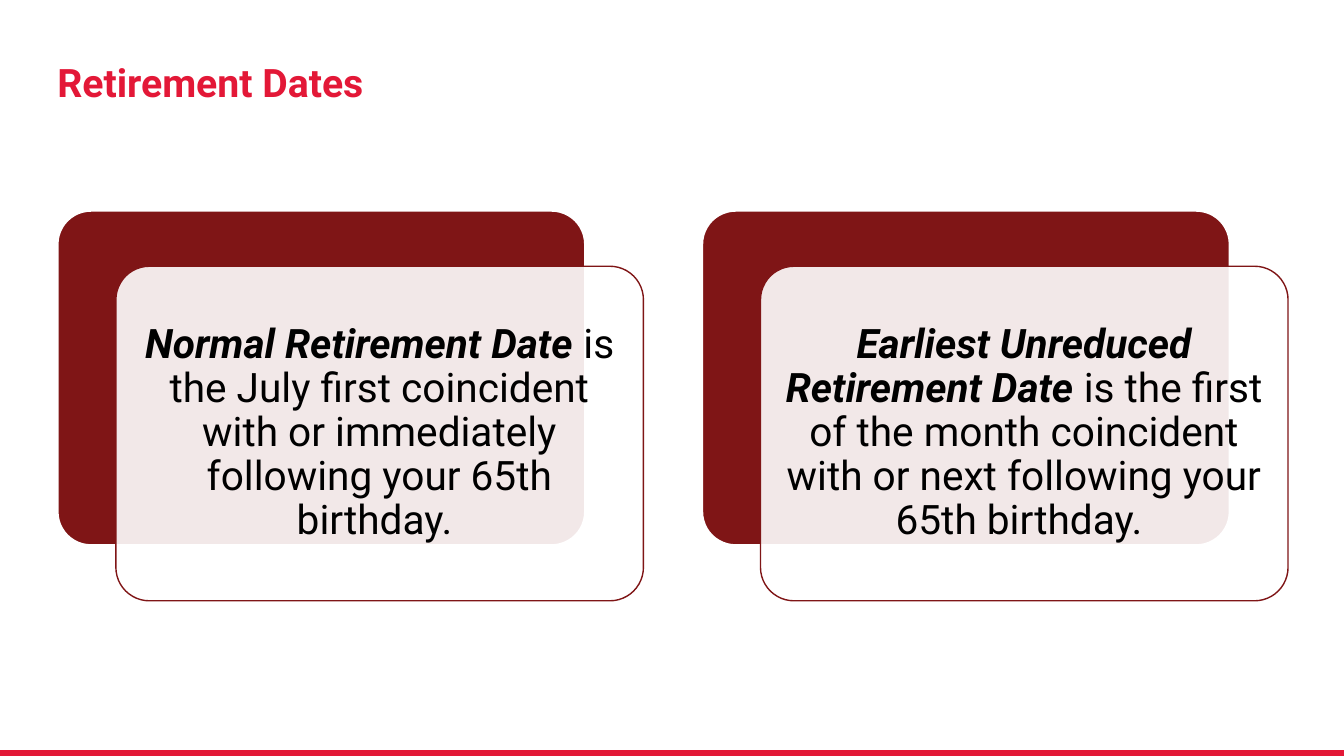
from lxml import etree
from pptx import Presentation
from pptx.dml.color import RGBColor
from pptx.enum.shapes import MSO_SHAPE as Preset
from pptx.enum.text import MSO_ANCHOR as Anchor, PP_ALIGN as Align
from pptx.oxml.ns import qn
from pptx.util import Cm, Pt

COLORS = {"red": "E31837", "maroon": "7F1516", "white": "FFFFFF", "black": "000000"}
FONT = "Roboto"
SLIDE_WIDTH, SLIDE_HEIGHT = 33.87, 19.05
MARGIN = 1.45
CONTENT_WIDTH = 31.01

RETIREMENT_DATES = [
    ("Normal Retirement Date ",
     "is the July first coincident with or immediately following your 65th birthday. "),
    ("Earliest Unreduced Retirement Date ",
     "is the first of the month coincident with or next following your 65th birthday. "),
]


def color(name):
    return RGBColor.from_string(COLORS[name])


def set_margins(frame, margin):
    frame.margin_left = frame.margin_right = Cm(margin)
    frame.margin_top = frame.margin_bottom = Cm(margin)


def add_panel(slide, preset, box, fill, line=None, line_width=1):
    panel = slide.shapes.add_shape(preset, *map(Cm, box))
    panel.shadow.inherit = False
    panel.fill.solid()
    panel.fill.fore_color.rgb = color(fill)
    if line:
        panel.line.color.rgb = color(line)
        panel.line.width = Pt(line_width)
    else:
        panel.line.fill.background()
    return panel


def add_title(slide, box, text):
    frame = slide.shapes.add_textbox(*map(Cm, box)).text_frame
    frame.word_wrap = True
    frame.vertical_anchor = Anchor.BOTTOM
    set_margins(frame, 0)
    title = frame.paragraphs[0]
    title.text = text
    title.line_spacing = 0.85
    title.font.name, title.font.size, title.font.bold = FONT, Pt(28), True
    title.font.color.rgb = color("red")


def add_date_card(slide, box, term, definition):
    left, top, width, height = box
    shift_x, shift_y = 1.47, 1.4
    size = (width - shift_x, height - shift_y)

    # Solid card behind, translucent card in front
    back = add_panel(slide, Preset.ROUNDED_RECTANGLE, (left, top, *size),
                     "maroon", "white", 1.5)
    front = add_panel(slide, Preset.ROUNDED_RECTANGLE,
                      (left + shift_x, top + shift_y, *size), "white", "maroon")
    for card in (back, front):
        card.adjustments[0] = 0.1
    fill_color = front.fill._xPr.find(qn("a:solidFill"))[0]
    etree.SubElement(fill_color, qn("a:alpha"), val="90000")

    # Term and its definition
    frame = front.text_frame
    frame.word_wrap = True
    frame.vertical_anchor = Anchor.MIDDLE
    set_margins(frame, 0.3)
    sentence = frame.paragraphs[0]
    sentence.alignment = Align.CENTER
    sentence.line_spacing = 0.9
    sentence.font.name, sentence.font.size = FONT, Pt(29)
    sentence.font.color.rgb = color("black")
    for text, emphasis in ((term, True), (definition, False)):
        run = sentence.add_run()
        run.text = text
        run.font.bold = run.font.italic = emphasis


def add_date_cards(slide, box):
    left, top, width, height = box
    gap = 1.48
    card_width = (width - gap * (len(RETIREMENT_DATES) - 1)) / len(RETIREMENT_DATES)
    for index, (term, definition) in enumerate(RETIREMENT_DATES):
        card_left = left + index * (card_width + gap)
        add_date_card(slide, (card_left, top, card_width, height), term, definition)


def main():
    deck = Presentation()
    deck.slide_width, deck.slide_height = Cm(SLIDE_WIDTH), Cm(SLIDE_HEIGHT)
    slide = deck.slides.add_slide(deck.slide_layouts[6])

    # Footer bar, title and cards
    add_panel(slide, Preset.RECTANGLE, (0, 18.9, SLIDE_WIDTH, 0.15), "red")
    add_title(slide, (MARGIN, 0.64, CONTENT_WIDTH, 2.01), "Retirement Dates")
    add_date_cards(slide, (MARGIN, 5.31, CONTENT_WIDTH, 9.83))
    deck.save("out.pptx")


if __name__ == "__main__":
    main()
